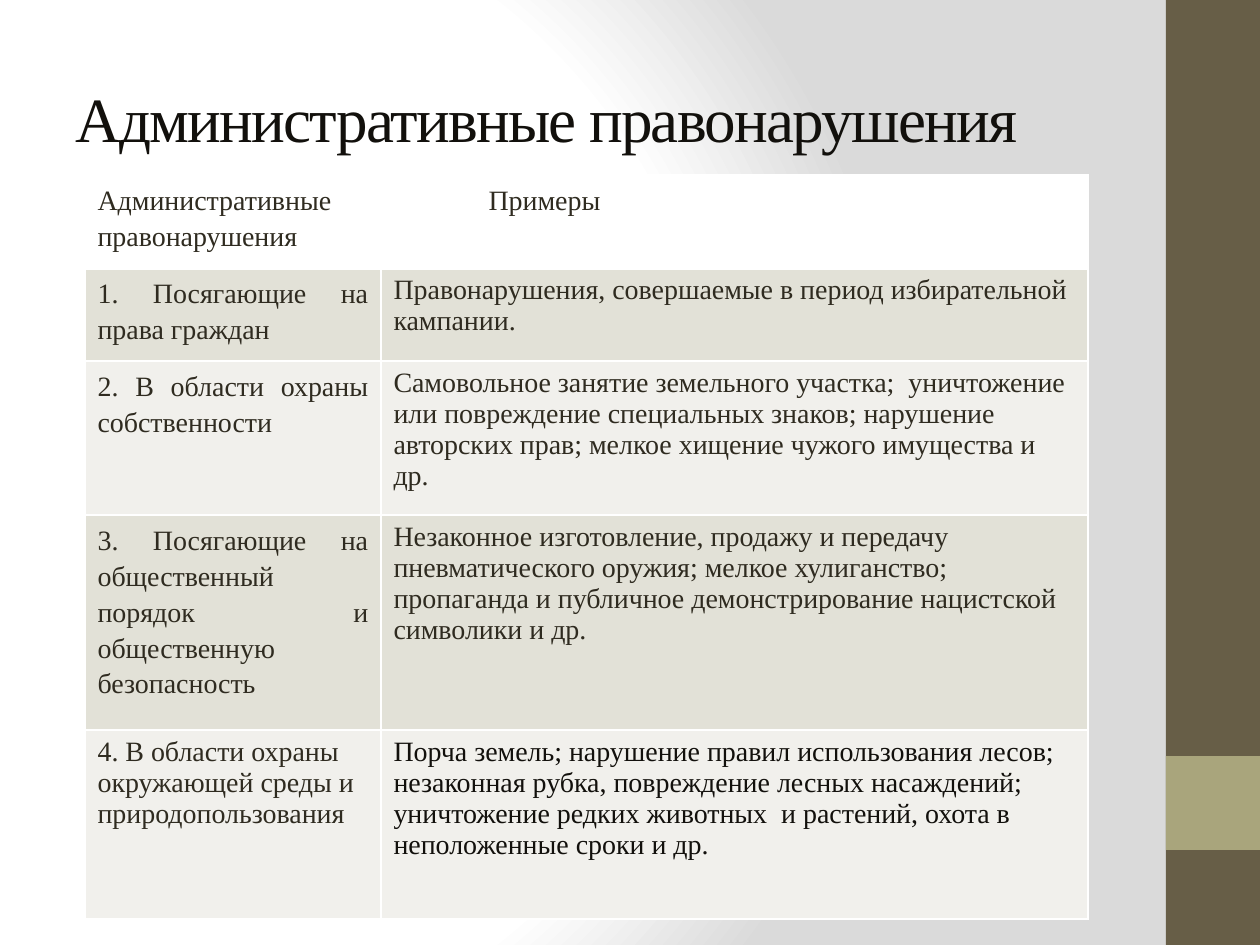
from lxml.etree import SubElement as Sub
from pptx import Presentation
from pptx.dml.color import RGBColor as RGB
from pptx.enum.shapes import MSO_SHAPE as Kind
from pptx.enum.text import MSO_ANCHOR as Anchor, PP_ALIGN as Align
from pptx.oxml import parse_xml
from pptx.oxml.ns import nsdecls, qn
from pptx.util import Pt

PX = 914400 // 126
FONT = "Times New Roman"
WHITE = RGB(0xFF, 0xFF, 0xFF)
GRAY = RGB(0xDA, 0xDA, 0xDA)
BROWN = RGB(0x67, 0x5E, 0x47)
OLIVE = RGB(0xA9, 0xA5, 0x7C)
INK = RGB(0x2F, 0x2B, 0x20)
DARK = RGB(0x12, 0x10, 0x0C)
BANDS = RGB(0xE2, 0xE1, 0xD7), RGB(0xF1, 0xF0, 0xEC)

# Content
TITLE = "Административные правонарушения"
ROWS = [
    ("Административные правонарушения", "Примеры"),
    ("1. Посягающие на права граждан",
     "Правонарушения, совершаемые в период избирательной кампании."),
    ("2. В области охраны собственности",
     "Самовольное занятие земельного участка;  уничтожение или повреждение "
     "специальных знаков; нарушение авторских прав; мелкое хищение чужого "
     "имущества и др."),
    ("3. Посягающие на общественный порядок и общественную безопасность",
     "Незаконное изготовление, продажу и передачу пневматического оружия; "
     "мелкое хулиганство; пропаганда и публичное демонстрирование нацистской "
     "символики и др."),
    ("4. В области охраны окружающей среды и природопользования",
     "Порча земель; нарушение правил использования лесов; незаконная рубка, "
     "повреждение лесных насаждений; уничтожение редких животных  и растений, "
     "охота в неположенные сроки и др."),
]
COLS = 296, 707
HIGHS = 93, 93, 154, 215, 189
BARS = [((1166, 0, 94, 945), BROWN), ((1166, 756, 94, 94), OLIVE)]


def box(*dims):
    return [d * PX for d in dims]


def write(frame, text, size=16, color=INK, align=None, line=None,
          indent=0, track=0):
    para = frame.paragraphs[0]
    para.alignment = align
    if line:
        para.line_spacing = line
    if indent:
        para._p.get_or_add_pPr().set("marL", str(indent * PX))
    run = para.add_run()
    run.text = text
    font = run.font
    font.name, font.size, font.color.rgb = FONT, Pt(size), color
    if track:
        run._r.get_or_add_rPr().set("spc", str(track * 100))


def edge(cell, side, width):
    props = cell._tc.get_or_add_tcPr()
    line = Sub(props, qn("a:ln" + side), w=str(Pt(width)))
    Sub(Sub(line, qn("a:solidFill")), qn("a:srgbClr"), val=str(WHITE))


deck = Presentation()
deck.slide_width, deck.slide_height = box(1260, 945)
slide = deck.slides.add_slide(deck.slide_layouts[6])

# Background glow
slide.background.fill.solid()
back = slide.element.find(".//" + qn("p:bgPr"))
stops = "".join(f'<a:gs pos="{at * 1000}"><a:srgbClr val="{color}"/></a:gs>'
                for at, color in [(0, WHITE), (75, WHITE), (100, GRAY)])
back.replace(back[0], parse_xml(
    f'<a:gradFill {nsdecls("a")} rotWithShape="1"><a:gsLst>{stops}</a:gsLst>'
    '<a:path path="circle"><a:fillToRect l="20000" t="50000" r="100000" '
    'b="50000"/></a:path></a:gradFill>'))

# Side bars
for dims, color in BARS:
    bar = slide.shapes.add_shape(Kind.RECTANGLE, *box(*dims))
    bar.shadow.inherit = False
    bar.fill.solid()
    bar.fill.fore_color.rgb = color
    bar.line.fill.background()

# Title
head = slide.shapes.add_textbox(*box(63, 38, 1050, 158)).text_frame
head.word_wrap = True
head.vertical_anchor = Anchor.MIDDLE
write(head, TITLE, size=36, color=DARK, track=-1)

# Table
grid = slide.shapes.add_table(
    len(ROWS), len(COLS), *box(85, 175, sum(COLS), sum(HIGHS))).table
for col, wide in zip(grid.columns, COLS):
    col.width = wide * PX
last = len(ROWS) - 1
for r, (row, high) in enumerate(zip(ROWS, HIGHS)):
    grid.rows[r].height = high * PX
    for c, text in enumerate(row):
        cell = grid.cell(r, c)
        for side in "LRTB":
            thick = (r, side) in [(0, "B"), (1, "T")]
            edge(cell, side, 3 if thick else 1)
        cell.fill.solid()
        cell.fill.fore_color.rgb = BANDS[(r - 1) % 2] if r else WHITE
        loose = r == 0 or (c == 0 and r < last)
        write(cell.text_frame, text,
              color=DARK if (r, c) == (last, 1) else INK,
              align=Align.JUSTIFY if loose and r else Align.LEFT,
              line=1.15 if loose else None,
              indent=95 if (r, c) == (0, 1) else 0)

deck.save("out.pptx")
